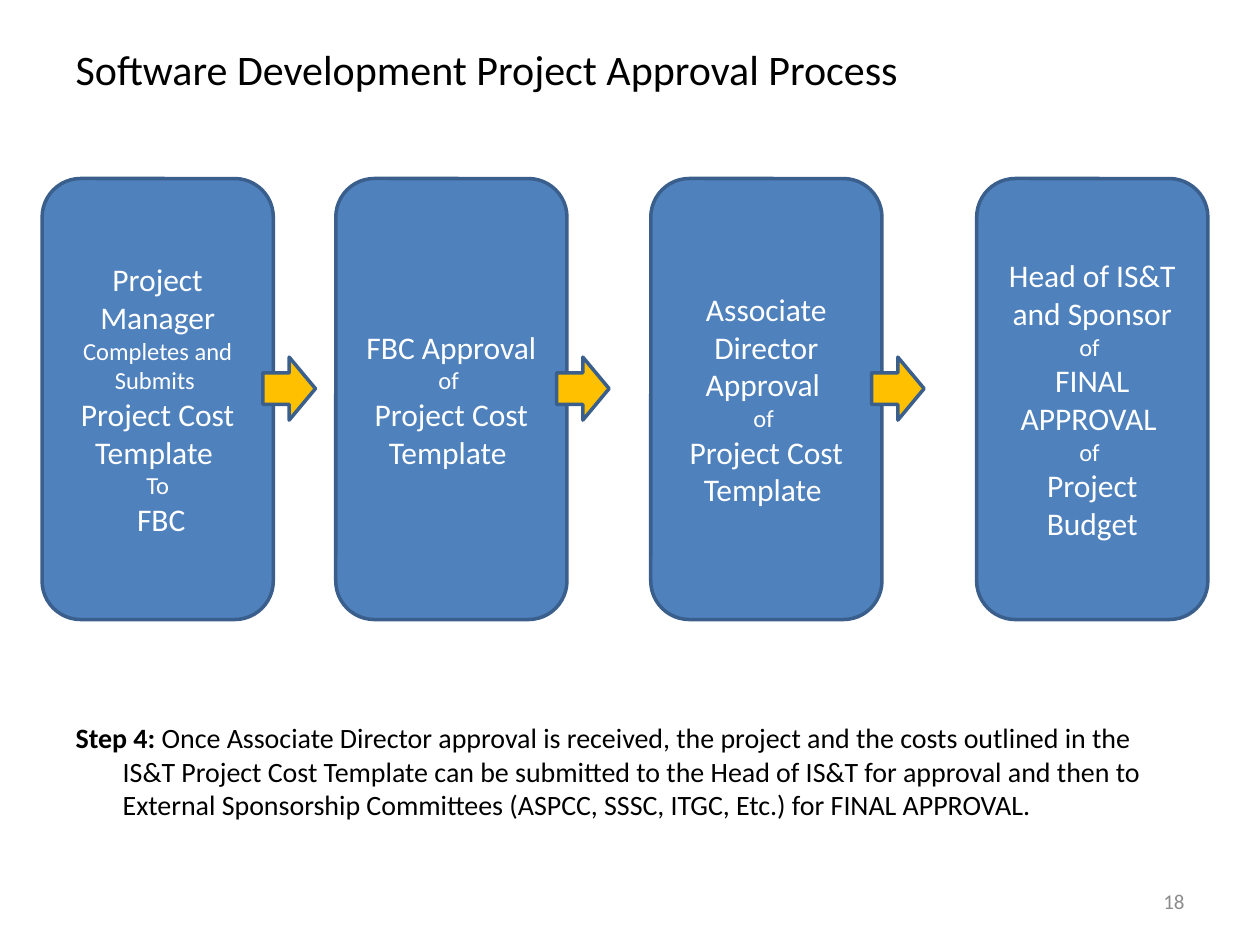
from dataclasses import dataclass

from pptx import Presentation
from pptx.dml.color import RGBColor
from pptx.enum import shapes, text
from pptx.oxml.ns import qn
from pptx.util import Cm, Pt


@dataclass(frozen=True)
class Theme:
    font: str = "Calibri"
    ink: str = "000000"
    muted: str = "8C8C8C"
    light: str = "FFFFFF"
    box: str = "4F81BD"
    arrow: str = "FFC000"
    outline: str = "3A5F8C"
    title: int = 24
    large: int = 18
    body: int = 16
    small: int = 14
    number: int = 12


THEME = Theme()


@dataclass(frozen=True)
class Frame:
    left: float
    top: float
    width: float
    height: float

    def lengths(self) -> tuple:
        return Cm(self.left), Cm(self.top), Cm(self.width), Cm(self.height)


@dataclass(frozen=True)
class Span:
    wording: str
    size: int = THEME.large


@dataclass(frozen=True)
class Stage:
    left: float
    paragraphs: tuple[tuple[Span, ...], ...]


def small(wording: str) -> Span:
    return Span(wording, THEME.small)


COST_TEMPLATE = (Span("Project Cost Template "),)
OF = small("of ")
STAGES = (
    Stage(0.85, (
        (Span("Project Manager "), small("Completes and Submits ")),
        COST_TEMPLATE,
        (small("To"),),
        (Span(" FBC"),),
    )),
    Stage(6.77, ((Span("FBC Approval "), OF), COST_TEMPLATE)),
    Stage(13.12, ((Span("Associate Director Approval "),), (OF,), COST_TEMPLATE)),
    Stage(19.69, (
        (Span("Head of IS&T and Sponsor"),),
        (OF,),
        (Span("FINAL APPROVAL "),),
        (OF,),
        (Span("Project Budget"),),
    )),
)

STAGE_TOP, STAGE_WIDTH, STAGE_HEIGHT = 3.6, 4.66, 8.89
ARROW_OFFSET, ARROW_TOP, ARROW_WIDTH, ARROW_HEIGHT = 4.45, 7.2, 1.06, 1.27


def style(p, color: str, size: int | None = None, align=text.PP_ALIGN.LEFT) -> None:
    p.alignment = align
    p.font.name = THEME.font
    p.font.color.rgb = RGBColor.from_string(color)
    if size:
        p.font.size = Pt(size)


def place(sp, frame: Frame) -> None:
    sp.left, sp.top, sp.width, sp.height = frame.lengths()


def add_block(s, kind, frame: Frame, fill: str):
    sp = s.shapes.add_shape(kind, *frame.lengths())
    sp.shadow.inherit = False
    sp.fill.solid()
    sp.fill.fore_color.rgb = RGBColor.from_string(fill)
    sp.line.color.rgb = RGBColor.from_string(THEME.outline)
    sp.line.width = Pt(2)
    return sp


def add_stage(s, stage: Stage) -> None:
    frame = Frame(stage.left, STAGE_TOP, STAGE_WIDTH, STAGE_HEIGHT)
    sp = add_block(s, shapes.MSO_SHAPE.ROUNDED_RECTANGLE, frame, THEME.box)
    tf = sp.text_frame
    tf.word_wrap = True
    tf.vertical_anchor = text.MSO_ANCHOR.MIDDLE
    for i, spans in enumerate(stage.paragraphs):
        p = tf.add_paragraph() if i else tf.paragraphs[0]
        style(p, THEME.light, align=text.PP_ALIGN.CENTER)
        for span in spans:
            r = p.add_run()
            r.text = span.wording
            r.font.size = Pt(span.size)


def add_arrow(s, stage: Stage) -> None:
    frame = Frame(stage.left + ARROW_OFFSET, ARROW_TOP, ARROW_WIDTH, ARROW_HEIGHT)
    add_block(s, shapes.MSO_SHAPE.RIGHT_ARROW, frame, THEME.arrow)


def fill_title(sp) -> None:
    place(sp, Frame(1.27, 0.64, 22.86, 1.48))
    sp.text_frame.text = "Software Development Project Approval Process"
    style(sp.text_frame.paragraphs[0], THEME.ink, THEME.title)


def fill_body(sp) -> None:
    place(sp, Frame(1.27, 14.4, 22.86, 2.62))
    p = sp.text_frame.paragraphs[0]
    style(p, THEME.ink, THEME.body)
    label = p.add_run()
    label.text = "Step 4: "
    label.font.bold = True
    p.add_run().text = (
        "Once Associate Director approval is received, the project and the costs "
        "outlined in the IS&T Project Cost Template can be submitted to the Head of "
        "IS&T for approval and then to External Sponsorship Committees (ASPCC, SSSC, "
        "ITGC, Etc.) for FINAL APPROVAL."
    )
    pPr = p._p.get_or_add_pPr()
    pPr.set("marL", str(Cm(0.95)))
    pPr.set("indent", str(-Cm(0.95)))
    pPr.insert(0, pPr.makeelement(qn("a:buNone"), {}))


def add_number(s) -> None:
    sp = s.shapes.add_textbox(*Frame(18.2, 17.65, 5.93, 1.02).lengths())
    tf = sp.text_frame
    tf.word_wrap = True
    tf.vertical_anchor = text.MSO_ANCHOR.MIDDLE
    tf.text = "18"
    style(tf.paragraphs[0], THEME.muted, THEME.number, text.PP_ALIGN.RIGHT)


def main() -> None:
    prs = Presentation()
    prs.slide_width, prs.slide_height = Cm(25.4), Cm(19.05)
    s = prs.slides.add_slide(prs.slide_layouts[1])
    fill_title(s.shapes.title)
    fill_body(s.placeholders[1])
    for stage in STAGES:
        add_stage(s, stage)
        if stage is not STAGES[-1]:
            add_arrow(s, stage)
    add_number(s)
    prs.save("out.pptx")


if __name__ == "__main__":
    main()
